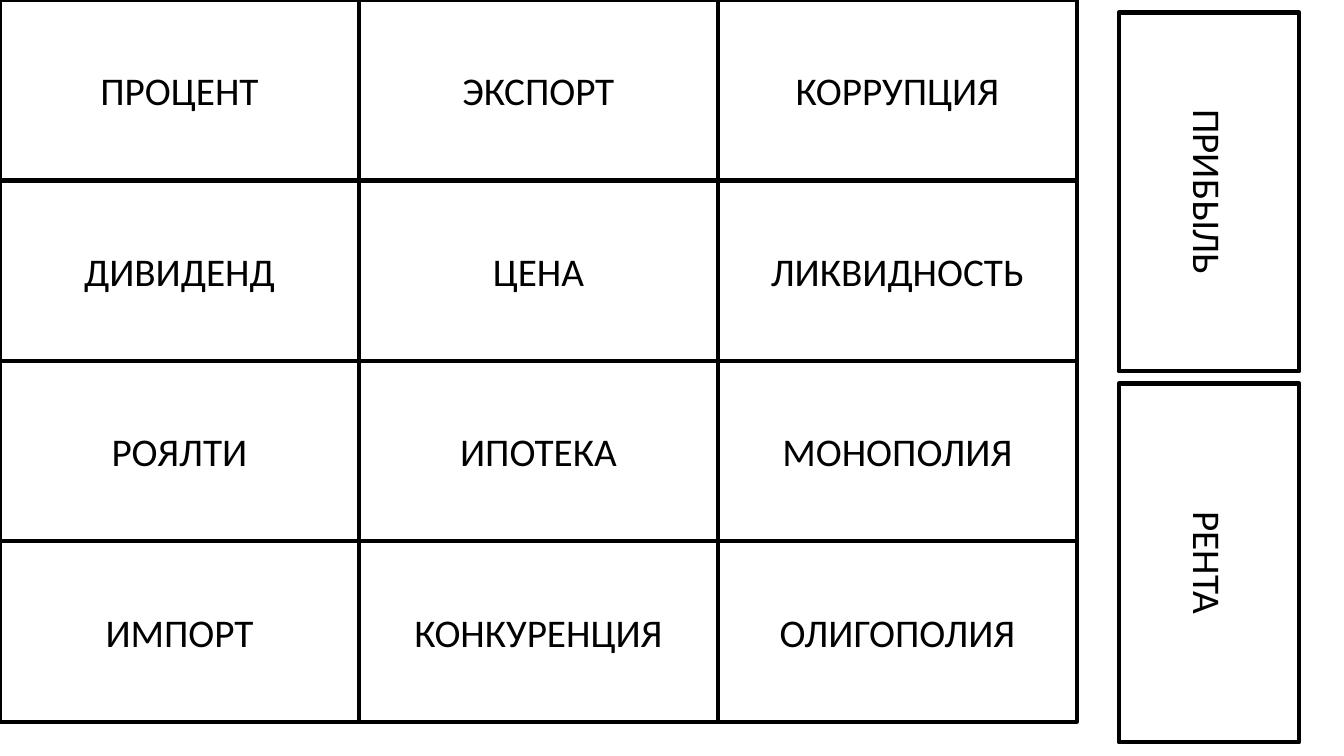
from pptx import Presentation
from pptx.dml.color import RGBColor
from pptx.enum.shapes import MSO_SHAPE
from pptx.enum.text import MSO_ANCHOR, PP_ALIGN
from pptx.util import Emu, Pt

BLACK = RGBColor(0x00, 0x00, 0x00)
EMU_PER_PX = 9144
SLIDE_WIDTH, SLIDE_HEIGHT = 1333, 750
CARD_WIDTH, CARD_HEIGHT = 356, 179
SIDE_LEFT, SIDE_TOP, SIDE_STEP = 1021, 101, 368

TERM_COLUMNS = [
    ["ПРОЦЕНТ", "ДИВИДЕНД", "РОЯЛТИ", "ИМПОРТ"],
    ["ЭКСПОРТ", "ЦЕНА", "ИПОТЕКА", "КОНКУРЕНЦИЯ"],
    ["КОРРУПЦИЯ", "ЛИКВИДНОСТЬ", "МОНОПОЛИЯ", "ОЛИГОПОЛИЯ"],
]
SIDE_TERMS = ["ПРИБЫЛЬ", "РЕНТА"]


def px(length):
    return Emu(length * EMU_PER_PX)


class CardSheet:
    """Draws term cards in one style on the current slide."""

    font_format = {"name": "Calibri", "size": Pt(28)}
    frame_format = {"word_wrap": True, "vertical_anchor": MSO_ANCHOR.MIDDLE}

    def __init__(self, slide):
        self.slide = slide

    def apply(self, target, values):
        for name, value in values.items():
            setattr(target, name, value)

    def card(self, term, left, top, rotation=0):
        shape = self.slide.shapes.add_shape(
            MSO_SHAPE.RECTANGLE, px(left), px(top), px(CARD_WIDTH), px(CARD_HEIGHT)
        )
        shape.rotation = rotation
        shape.shadow.inherit = False
        shape.fill.background()
        shape.line.color.rgb = BLACK
        shape.line.width = Pt(3)
        self.apply(shape.text_frame, self.frame_format)
        paragraph = shape.text_frame.paragraphs[0]
        paragraph.alignment = PP_ALIGN.CENTER
        run = paragraph.add_run()
        run.text = term
        self.apply(run.font, self.font_format)
        run.font.color.rgb = BLACK


def main():
    presentation = Presentation()
    presentation.slide_width = px(SLIDE_WIDTH)
    presentation.slide_height = px(SLIDE_HEIGHT)
    sheet = CardSheet(presentation.slides.add_slide(presentation.slide_layouts[6]))
    for column, terms in enumerate(TERM_COLUMNS):
        for row, term in enumerate(terms):
            sheet.card(term, column * CARD_WIDTH, row * CARD_HEIGHT)
    for position, term in enumerate(SIDE_TERMS):
        sheet.card(term, SIDE_LEFT, SIDE_TOP + position * SIDE_STEP, rotation=90)
    presentation.save("out.pptx")


if __name__ == "__main__":
    main()
